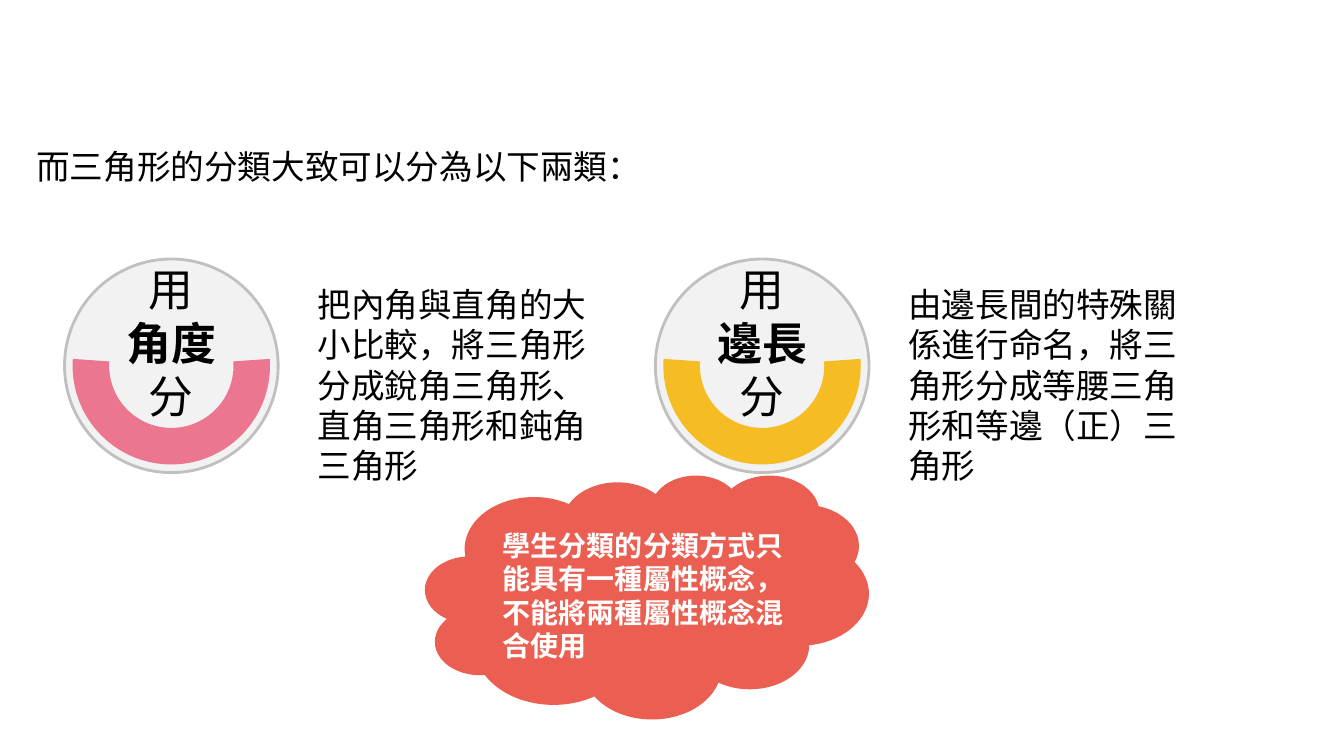
"""Slide on the two ways to classify triangles: by angle and by side length."""
from pptx import Presentation
from pptx.dml.color import RGBColor
from pptx.enum.shapes import MSO_SHAPE as SHAPE
from pptx.enum.text import MSO_ANCHOR as ANCHOR, PP_ALIGN as ALIGN
from pptx.oxml.ns import qn
from pptx.util import Pt
from lxml.etree import SubElement

BLACK = RGBColor(0, 0, 0)
WHITE = RGBColor(255, 255, 255)
DISC = RGBColor(0xF2, 0xF2, 0xF2)
RIM = RGBColor(0xC0, 0xC0, 0xC0)
PINK = RGBColor(0xEC, 0x76, 0x90)
YELLOW = RGBColor(0xF5, 0xBD, 0x23)
RED = RGBColor(0xEB, 0x5F, 0x52)
FONT = "Noto Sans CJK SC"

prs = Presentation()
prs.slide_width, prs.slide_height = Pt(960), Pt(540)
s = prs.slides.add_slide(prs.slide_layouts[6])


def add_shape(kind, x, y, w, h, fill):
    sp = s.shapes.add_shape(kind, Pt(x), Pt(y), Pt(w), Pt(h))
    sp.shadow.inherit = False
    sp.fill.solid()
    sp.fill.fore_color.rgb = fill
    sp.line.fill.background()
    return sp


def add_text(box, lines, size, color=BLACK, bold=(False,), inset=3.6,
             align=ALIGN.LEFT, wrap=True, anchor=ANCHOR.TOP):
    tf = box.text_frame
    frame = {"word_wrap": wrap, "vertical_anchor": anchor,
             "margin_left": Pt(inset), "margin_right": Pt(inset),
             "margin_top": Pt(3.6), "margin_bottom": Pt(3.6)}
    for name, value in frame.items():
        setattr(tf, name, value)
    for i, (line, heavy) in enumerate(zip(lines, bold)):
        p = tf.add_paragraph() if i else tf.paragraphs[0]
        p.alignment = align
        r = p.add_run()
        r.text = line
        for name, value in {"name": FONT, "size": Pt(size), "bold": heavy}.items():
            setattr(r.font, name, value)
        r.font.color.rgb = color
        SubElement(r._r.get_or_add_rPr(), qn("a:ea")).set("typeface", FONT)


intro = s.shapes.add_textbox(Pt(22.3), Pt(100.8), Pt(710.6), Pt(123.8))
add_text(intro, ["而三角形的分類大致可以分為以下兩類："], 24)

CATEGORIES = [
    ("角度", PINK, "把內角與直角的大小比較，將三角形分成銳角三角形、直角三角形和鈍角三角形"),
    ("邊長", YELLOW, "由邊長間的特殊關係進行命名，將三角形分成等腰三角形和等邊（正）三角形"),
]
for i, (criterion, color, description) in enumerate(CATEGORIES):
    x = 46.1 + 422 * i
    disc = add_shape(SHAPE.OVAL, x, 185, 152.6, 152.6, DISC)
    disc.line.color.rgb = RIM
    disc.line.width = Pt(2)

    label = add_shape(SHAPE.RECTANGLE, x + 40.8, 216, 71, 57, DISC)
    add_text(label, ["用", criterion, "分"], 32, bold=(False, True, False),
             inset=7.2, align=ALIGN.CENTER, wrap=False, anchor=ANCHOR.MIDDLE)

    arc = add_shape(SHAPE.BLOCK_ARC, x + 5.8, 190.8, 141, 141, color)
    for n, value in enumerate((356 * 0.6, 184 * 0.6, 0.185)):
        arc.adjustments[n] = value

    body = s.shapes.add_textbox(Pt(x + 177.1), Pt(199.4), Pt(210.2), Pt(148.3))
    add_text(body, [description], 24)

add_shape(SHAPE.CLOUD, 303.8, 339.1, 316.8, 174.2, RED)
note = s.shapes.add_textbox(Pt(352.1), Pt(373.7), Pt(220.3), Pt(104.4))
add_text(note, ["學生分類的分類方式只能具有一種屬性概念，不能將兩種屬性概念混合使用"],
         20, WHITE, (True,), inset=7.2)

prs.save("out.pptx")
